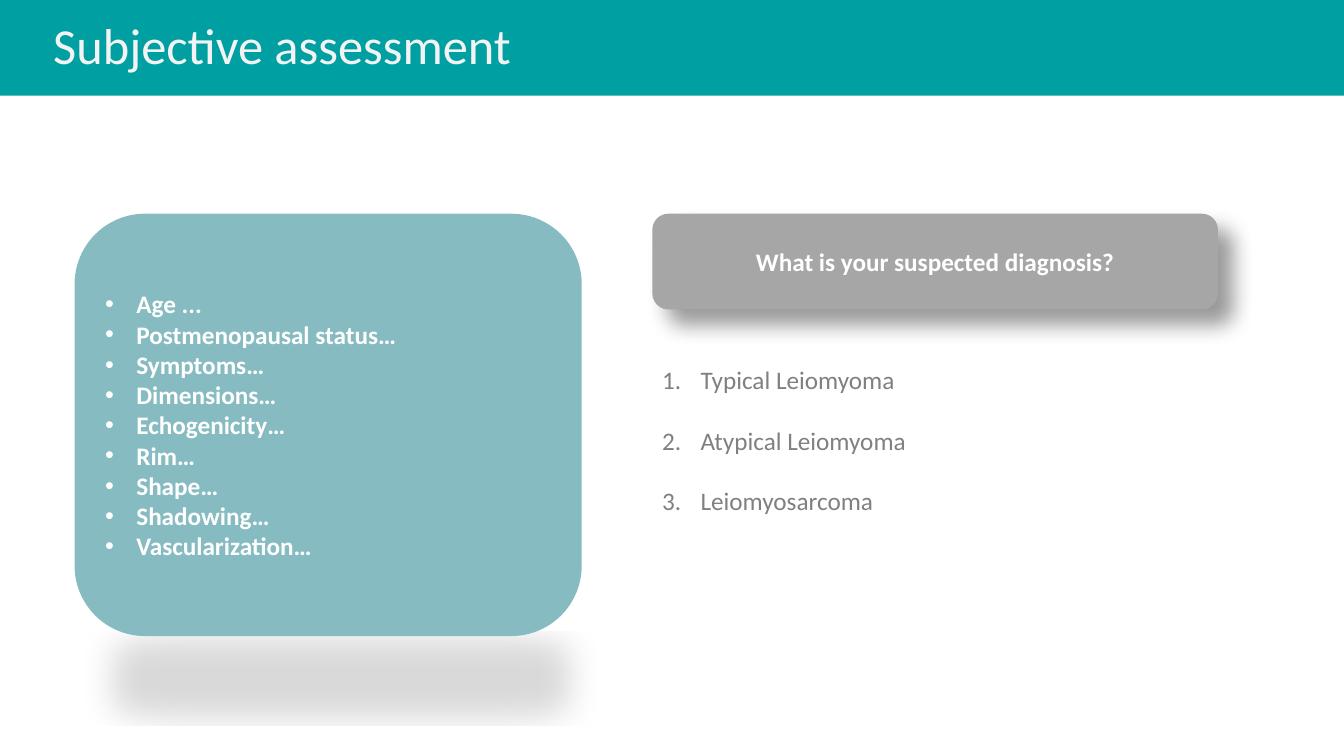
from lxml import etree
from pptx import Presentation
from pptx.dml.color import RGBColor
from pptx.enum.shapes import MSO_SHAPE
from pptx.enum.text import MSO_ANCHOR, PP_ALIGN
from pptx.oxml.ns import qn
from pptx.util import Inches, Pt

RECTANGLE, ROUNDED = MSO_SHAPE.RECTANGLE, MSO_SHAPE.ROUNDED_RECTANGLE
TOP, MIDDLE = MSO_ANCHOR.TOP, MSO_ANCHOR.MIDDLE
LEFT, CENTER = PP_ALIGN.LEFT, PP_ALIGN.CENTER

TEAL, PALE_TEAL, GREY = "00A0A2", "86BCC1", "A6A6A6"
WHITE, OFF_WHITE, TEXT_GREY, BLACK = "FFFFFF", "F3F3F3", "808080", "000000"
FONT = "Calibri"

FINDINGS = ["Age ...", "Postmenopausal status…", "Symptoms…", "Dimensions…",
            "Echogenicity…", "Rim…", "Shape…", "Shadowing…", "Vascularization…"]
DIAGNOSES = ["Typical Leiomyoma", "Atypical Leiomyoma", "Leiomyosarcoma"]


def color(value):
    return RGBColor.from_string(value)


def add_panel(page, kind, box, fill):
    panel = page.shapes.add_shape(kind, *map(Inches, box))
    panel.shadow.inherit = False
    panel.fill.solid()
    panel.fill.fore_color.rgb = color(fill)
    panel.line.fill.background()
    return panel


def add_shadow(panel, alpha, blur, distance, angle, **scale):
    """Cast a black shadow; alpha in percent, lengths in points, angle in degrees."""
    effects = panel._element.spPr.find(qn("a:effectLst"))
    shadow = etree.SubElement(effects, qn("a:outerShdw"), blurRad=str(Pt(blur)),
                              dist=str(Pt(distance)), dir=str(angle * 60000),
                              **scale, rotWithShape="0")
    tint = etree.SubElement(shadow, qn("a:srgbClr"), val=BLACK)
    etree.SubElement(tint, qn("a:alpha"), val=str(alpha * 1000))


def add_marker(para, indent, tag, **attributes):
    """Give a paragraph a hanging indent and a bullet or number."""
    properties = para._p.get_or_add_pPr()
    properties.set("marL", str(Inches(indent)))
    properties.set("indent", str(-Inches(indent)))
    if tag == "a:buChar":
        etree.SubElement(properties, qn("a:buFont"), typeface="Arial")
    etree.SubElement(properties, qn(tag), **attributes)


def write(shape, lines, size, ink, bold=False, align=LEFT, anchor=MIDDLE,
          spacing=1.0, marker=None):
    frame = shape.text_frame
    frame.word_wrap = True
    frame.vertical_anchor = anchor
    frame.text = "\n".join(lines)
    for para in frame.paragraphs:
        para.alignment = align
        para.line_spacing = spacing
        if marker:
            add_marker(para, **marker)
        para.font.name = FONT
        para.font.size = Pt(size)
        para.font.bold = bold
        para.font.color.rgb = color(ink)


def add_title_band(page, left, top, width, height):
    add_panel(page, RECTANGLE, (left, top, width, height), TEAL)
    title = page.shapes.add_textbox(Inches(left + 0.43), Inches(top),
                                    Inches(11.5), Inches(height))
    write(title, ["Subjective assessment"], 36, OFF_WHITE, spacing=0.9)


def add_diagnosis_question(page, left, top, width, height):
    """Place the question panel with the numbered answers below it."""
    header_height = 0.95
    header = add_panel(page, ROUNDED, (left, top, 5.61, header_height), GREY)
    add_shadow(header, 40, 15, 15, 45, algn="tl")
    write(header, ["What is your suspected diagnosis?"], 18, WHITE,
          bold=True, align=CENTER)
    list_offset = header_height + 0.2
    answers = page.shapes.add_textbox(Inches(left), Inches(top + list_offset),
                                      Inches(width), Inches(height - list_offset))
    write(answers, DIAGNOSES, 18, TEXT_GREY, anchor=TOP, spacing=2.0,
          marker={"indent": 0.38, "tag": "a:buAutoNum", "type": "arabicPeriod"})


def add_findings(page, left, top, width, height):
    panel = add_panel(page, ROUNDED, (left, top, width, height), PALE_TEAL)
    add_shadow(panel, 15, 24.6, 9.2, 9, sx="90000", sy="-19000", algn="b")
    write(panel, FINDINGS, 18, WHITE, bold=True,
          marker={"indent": 0.31, "tag": "a:buChar", "char": "•"})


def main():
    deck = Presentation()
    deck.slide_width, deck.slide_height = Inches(13.33), Inches(7.5)
    page = deck.slides.add_slide(deck.slide_layouts[6])
    page.background.fill.solid()
    page.background.fill.fore_color.rgb = color(WHITE)
    add_title_band(page, 0, 0, 13.33, 0.95)
    add_diagnosis_question(page, 6.47, 2.12, 6.67, 2.98)
    add_findings(page, 0.74, 2.12, 5.03, 4.19)
    deck.save("out.pptx")


if __name__ == "__main__":
    main()
